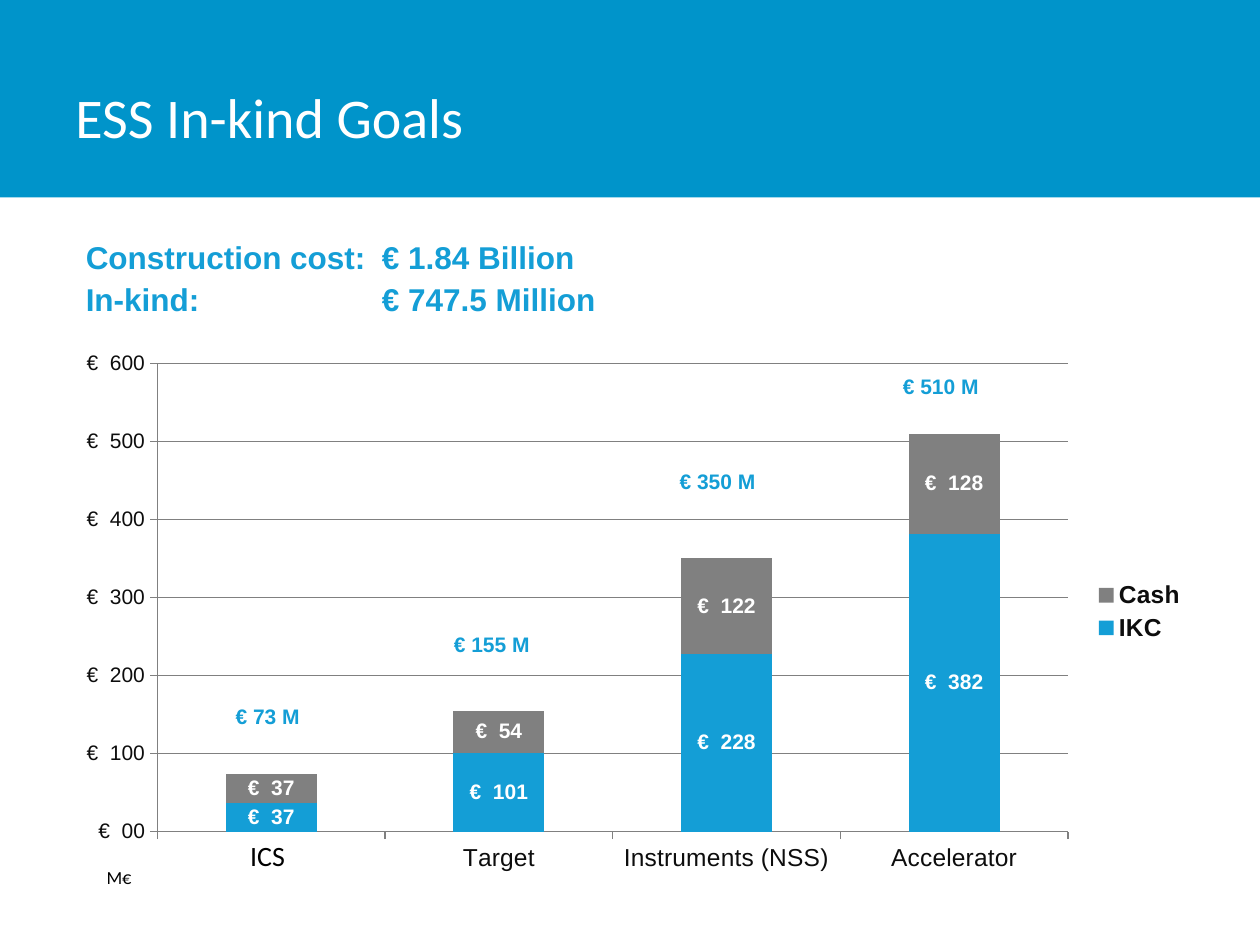
"""Build the ESS in-kind goals slide with a stacked cost chart."""
from lxml import etree
from pptx import Presentation, util as u
from pptx.chart.data import CategoryChartData
from pptx.dml.color import RGBColor
from pptx.enum import chart as ch, shapes, text
from pptx.oxml import parse_xml
from pptx.oxml.ns import nsdecls, qn

COLORS = {"band": "0094CA", "ikc": "149ED6", "cash": "808080",
          "white": "FFFFFF", "black": "000000", "axis": "0D0D0D"}
TITLE = "ESS In-kind Goals"
SUMMARY = [("Construction cost:", "€ 1.84 Billion"), ("In-kind:", "€ 747.5 Million")]
CATEGORIES = ["ICS", "Target", "Instruments (NSS)", "Accelerator"]
SERIES = [("IKC", "ikc", (37, 101, 228, 382)),
          ("Cash", "cash", (37, 54, 122, 128))]
TOTALS = [("€ 73 M", 4.5, 14.05, 1.83), ("€ 155 M", 8.9, 12.6, 2.06),
          ("€ 350 M", 13.45, 9.32, 2.06), ("€ 510 M", 17.95, 7.4, 2.06)]
EURO = r"[$€-2]\ #\ ##0"
EURO_AXIS = rf"{EURO};{EURO};[$€-2]\ \ 00"
PLOT = {"x": 0.082, "y": 0.041, "w": 0.803, "h": 0.866}


def rgb(name):
    return RGBColor.from_string(COLORS[name])


def style(font, size, color, name="Arial", bold=False):
    font.size, font.name, font.bold = u.Pt(size), name, bold
    font.color.rgb = rgb(color)


def add_run(p, words, *look):
    r = p.add_run()
    r.text = words
    style(r.font, *look)


def add_box(s, box, wrap=True, anchor=text.MSO_ANCHOR.TOP):
    tf = s.shapes.add_textbox(*map(u.Cm, box)).text_frame
    tf.word_wrap, tf.vertical_anchor = wrap, anchor
    return tf


def add_rect(s, box, color):
    sp = s.shapes.add_shape(shapes.MSO_SHAPE.RECTANGLE, *map(u.Cm, box))
    sp.shadow.inherit = False
    sp.fill.solid()
    sp.fill.fore_color.rgb = rgb(color)
    sp.line.fill.background()
    return sp


def add_summary(s):
    tf = add_box(s, (1.48, 4.24, 11.4, 2.64), anchor=text.MSO_ANCHOR.MIDDLE)
    for i, (label, amount) in enumerate(SUMMARY):
        p = tf.add_paragraph() if i else tf.paragraphs[0]
        p.line_spacing = 1.1
        tabs = etree.SubElement(p._p.get_or_add_pPr(), qn("a:tabLst"))
        etree.SubElement(tabs, qn("a:tab"), pos=str(u.Cm(5.97)), algn="l")
        add_run(p, f"{label}\t{amount}", 18, "ikc", "Arial", True)


def place_plot(chart):
    spots = "".join(f'<c:{k} val="{v}"/>' for k, v in PLOT.items())
    layout = parse_xml(
        f'<c:layout {nsdecls("c")}><c:manualLayout><c:layoutTarget val="inner"/>'
        f'<c:xMode val="edge"/><c:yMode val="edge"/>{spots}</c:manualLayout></c:layout>')
    area = chart._chartSpace.chart.plotArea
    for old in area.findall(qn("c:layout")):
        area.remove(old)
    area.insert(0, layout)


def add_cost_chart(s):
    data = CategoryChartData(number_format=EURO)
    data.categories = CATEGORIES
    for name, _, values in SERIES:
        data.add_series(name, values)
    chart = s.shapes.add_chart(ch.XL_CHART_TYPE.COLUMN_STACKED,
                               *map(u.Cm, (1.3, 6.88, 22.86, 10.9)), data).chart
    style(chart.font, 18, "black", "Calibri")
    chart.has_title = False
    chart.has_legend = True
    chart.legend.position = ch.XL_LEGEND_POSITION.RIGHT
    chart.legend.include_in_layout = False
    style(chart.legend.font, 14, "axis", "Arial", True)

    plot = chart.plots[0]
    plot.gap_width, plot.overlap, plot.vary_by_categories = 150, 100, False
    for series, (_, color, _) in zip(plot.series, SERIES):
        series.format.fill.solid()
        series.format.fill.fore_color.rgb = rgb(color)
        labels = series.data_labels
        labels.show_value = True
        labels.position = ch.XL_LABEL_POSITION.CENTER
        labels.number_format, labels.number_format_is_linked = EURO, False
        style(labels.font, 12, "white", "Arial", True)

    values = chart.value_axis
    values.minimum_scale, values.maximum_scale, values.major_unit = 0, 600, 100
    values.has_major_gridlines = True
    values.major_gridlines.format.line.color.rgb = rgb("cash")
    values.tick_labels.number_format = EURO_AXIS
    values.tick_labels.number_format_is_linked = False
    for axis, size in ((chart.category_axis, 14), (values, 12)):
        axis.major_tick_mark = ch.XL_TICK_MARK.OUTSIDE
        axis.format.line.color.rgb = rgb("cash")
        style(axis.tick_labels.font, size, "axis")
    place_plot(chart)


def main():
    prs = Presentation()
    prs.slide_width, prs.slide_height = u.Cm(25.4), u.Cm(19.05)
    s = prs.slides.add_slide(prs.slide_layouts[6])
    add_rect(s, (0, 0, 25.4, 3.98), "band")
    title = add_box(s, (1.27, 0.76, 19.84, 3.18), anchor=text.MSO_ANCHOR.MIDDLE)
    add_run(title.paragraphs[0], TITLE, 32, "white", "Calibri")
    add_cost_chart(s)
    for words, left, top, width in TOTALS:
        tf = add_box(s, (left, top, width, 0.76), wrap=False)
        add_run(tf.paragraphs[0], words, 12, "ikc", "Arial", True)
    add_summary(s)
    unit = add_box(s, (1.9, 17.33, 1.4, 0.74))
    add_run(unit.paragraphs[0], "M€", 10.5, "black", "Calibri")
    tf = add_rect(s, (4.29, 16.78, 2.21, 0.94), "white").text_frame
    tf.vertical_anchor = text.MSO_ANCHOR.TOP
    p = tf.paragraphs[0]
    p.alignment = text.PP_ALIGN.CENTER
    add_run(p, CATEGORIES[0], 16, "black", "Calibri")
    prs.save("out.pptx")


if __name__ == "__main__":
    main()
